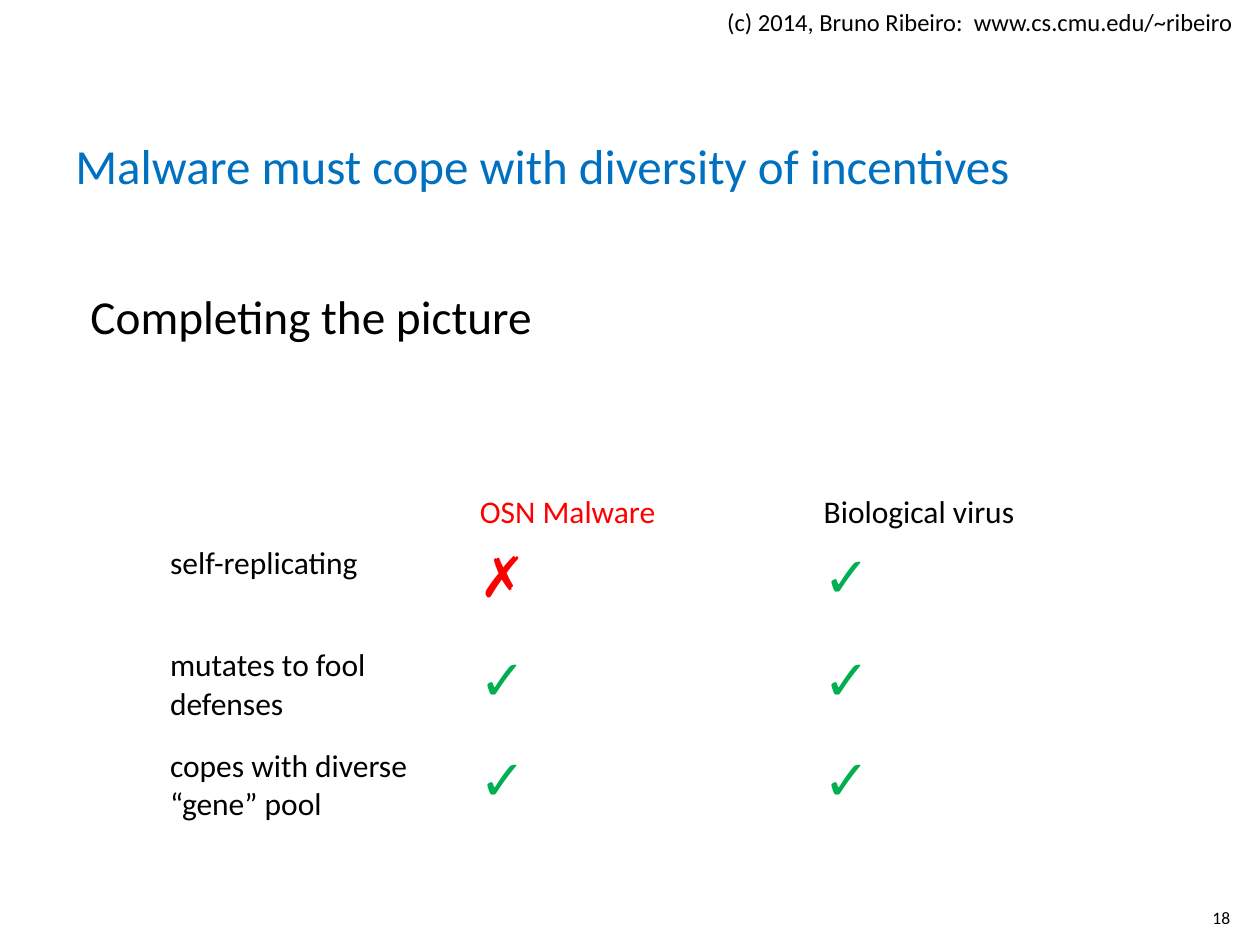
import pptx
import pptx.util
import pptx.dml.color
import pptx.enum.text

Pt = pptx.util.Pt
RGBColor = pptx.dml.color.RGBColor
ANCHOR = pptx.enum.text.MSO_ANCHOR
ALIGN = pptx.enum.text.PP_ALIGN

FONT = "Calibri"
BLACK = RGBColor(0x00, 0x00, 0x00)
BLUE = RGBColor(0x00, 0x70, 0xC0)
RED = RGBColor(0xFF, 0x00, 0x00)
GREEN = RGBColor(0x00, 0xB0, 0x50)

# Content
CREDIT = "(c) 2014, Bruno Ribeiro:  www.cs.cmu.edu/~ribeiro"
TITLE = "Malware must cope with diversity of incentives"
LEAD = "Completing the picture"
PAGE_NUMBER = "18"
COMPARISON = [
    ("", "OSN Malware", "Biological virus"),
    ("self-replicating", "✗", "✓"),
    ("mutates to fool defenses", "✓", "✓"),
    ("copes with diverse “gene” pool", "✓", "✓"),
]
COLUMN_WIDTHS = (177, 196.5, 217.5)
ROW_HEIGHTS = (29, 58.5, 57.5, 50.5)
# Size and colour of cells that differ from plain labels
CELL_STYLES = {"OSN Malware": (18, RED), "✗": (32, RED), "✓": (32, GREEN)}


def write(frame, text, size, color):
    frame.text = text
    para = frame.paragraphs[0]
    for span in para.runs:
        span.font.name = FONT
        span.font.size = Pt(size)
        span.font.color.rgb = color
    return para


def add_text(page, bounds, text, size, color=BLACK, anchor=ANCHOR.TOP, wrap=True):
    box = page.shapes.add_textbox(*map(Pt, bounds))
    box.text_frame.word_wrap = wrap
    box.text_frame.vertical_anchor = anchor
    return write(box.text_frame, text, size, color)


def add_comparison(page, left, top):
    frame = page.shapes.add_table(
        len(COMPARISON), len(COLUMN_WIDTHS), Pt(left), Pt(top),
        Pt(sum(COLUMN_WIDTHS)), Pt(sum(ROW_HEIGHTS)))
    table = frame.table
    table.first_row = False
    table.horz_banding = False
    for column, width in zip(table.columns, COLUMN_WIDTHS):
        column.width = Pt(width)
    for row, height, texts in zip(table.rows, ROW_HEIGHTS, COMPARISON):
        row.height = Pt(height)
        for cell, text in zip(row.cells, texts):
            cell.fill.background()
            size, color = CELL_STYLES.get(text, (18, BLACK))
            write(cell.text_frame, text, size, color)


def main():
    deck = pptx.Presentation()
    deck.slide_width, deck.slide_height = Pt(720), Pt(540)
    page = deck.slides.add_slide(deck.slide_layouts[6])

    # Credit line and page number
    add_text(page, (408.5, 0.5, 304.5, 24.5), CREDIT, 14, wrap=False)
    number = add_text(page, (681, 505, 29, 29), PAGE_NUMBER, 10, anchor=ANCHOR.BOTTOM)
    number.alignment = ALIGN.RIGHT

    # Title and lead line
    add_text(page, (36, 54.5, 648, 79), TITLE, 28, BLUE, ANCHOR.MIDDLE)
    lead = add_text(page, (36, 160.5, 648, 349), LEAD, 27)
    lead.space_before = Pt(4)
    lead._p.get_or_add_pPr().set("marL", str(Pt(8.64)))

    # Comparison table
    add_comparison(page, 90, 278.5)

    deck.save("out.pptx")


if __name__ == "__main__":
    main()
